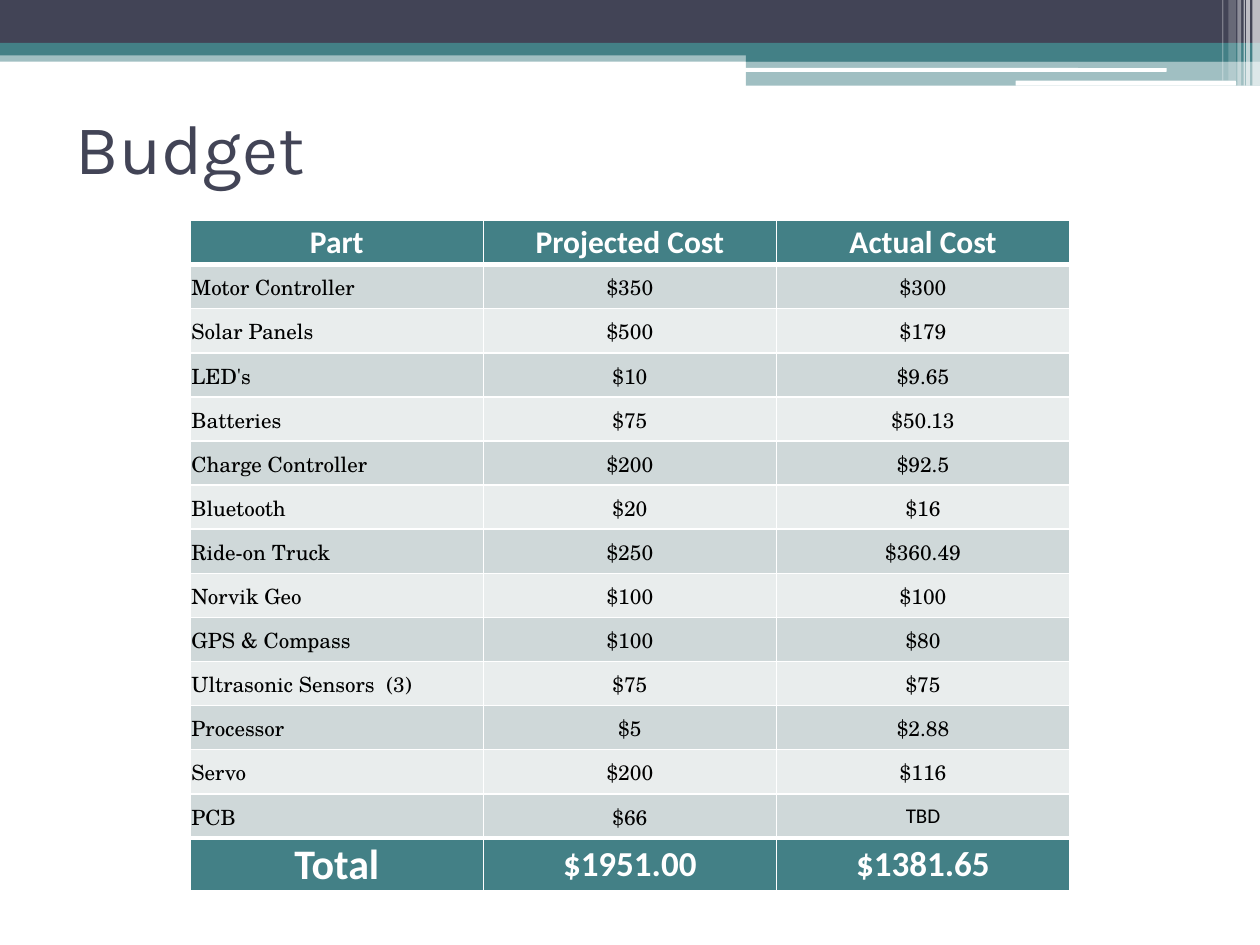
from lxml.etree import SubElement as Sub
from pptx import Presentation
from pptx.dml.color import RGBColor
from pptx.enum.shapes import MSO_SHAPE as Shape
from pptx.enum.text import MSO_ANCHOR as Anchor, MSO_AUTO_SIZE as Fit, PP_ALIGN as Align
from pptx.oxml.ns import qn
from pptx.util import Inches, Pt

COLS, ROWS = 1000, 750
NAVY, TEAL, WHITE = "424456", "438086", "FFFFFF"
SHADES = ["CFD8D9", "E9EDED"]
SERIF, SANS = "TeX Gyre Schola", "Calibri"

BANDS = [
    (0, 40, 1000, 9, TEAL, 50),
    (0, 0, 1000, 34, NAVY, 100),
    (0, 34, 1000, 10, TEAL, 100),
    (592, 39, 408, 10, TEAL, 100),
    (592, 48, 408, 20, TEAL, 50),
]
PILLS = [(591, 54, 335, 3), (806, 64, 175, 4)]
STRIPES = [
    (994, 6, 68, 65), (989, 3, 68, 65), (987, 1, 68, 60),
    (982, 3, 68, 40), (975, 6, 64, 20), (970, 1, 64, 30),
]
COSTS = [
    ("Part", "Projected Cost", "Actual Cost"),
    ("Motor Controller", "$350", "$300"),
    ("Solar Panels", "$500", "$179"),
    ("LED's", "$10", "$9.65"),
    ("Batteries", "$75", "$50.13"),
    ("Charge Controller", "$200", "$92.5"),
    ("Bluetooth", "$20", "$16"),
    ("Ride-on Truck", "$250", "$360.49"),
    ("Norvik Geo", "$100", "$100"),
    ("GPS & Compass", "$100", "$80"),
    ("Ultrasonic Sensors  (3)", "$75", "$75"),
    ("Processor", "$5", "$2.88"),
    ("Servo", "$200", "$116"),
    ("PCB", "$66", "TBD"),
    ("Total", "$1951.00", "$1381.65"),
]

deck = Presentation()
deck.slide_width, deck.slide_height = Inches(10), Inches(7.5)


def color(code):
    return RGBColor.from_string(code)


def place(left, top, wide, high):
    x, y = deck.slide_width / COLS, deck.slide_height / ROWS
    return [round(n) for n in (left * x, top * y, wide * x, high * y)]


def style(part, size, font, code, bold=False):
    for run in part.runs:
        run.font.size, run.font.name = Pt(size), font
        run.font.color.rgb, run.font.bold = color(code), bold


def block(slide, box, code, alpha=100, kind=Shape.RECTANGLE):
    shape = slide.shapes.add_shape(kind, *place(*box))
    shape.shadow.inherit = False
    shape.fill.solid()
    shape.fill.fore_color.rgb = color(code)
    shape.line.fill.background()
    if alpha < 100:
        tint = shape.fill._xPr.find(".//" + qn("a:srgbClr"))
        Sub(tint, qn("a:alpha"), val=str(alpha * 1000))


def banner(slide, left, top):
    for x, y, wide, high, code, alpha in BANDS:
        block(slide, (left + x, top + y, wide, high), code, alpha)
    for x, y, wide, high in PILLS:
        block(slide, (left + x, top + y, wide, high), WHITE, kind=Shape.ROUNDED_RECTANGLE)
    for x, wide, high, alpha in STRIPES:
        block(slide, (left + x, top, wide, high), WHITE, alpha)


def heading(slide, box, text):
    title = slide.shapes.title
    title.left, title.top, title.width, title.height = place(*box)
    frame = title.text_frame
    frame.text = text
    frame.auto_size = Fit.NONE
    frame.vertical_anchor = Anchor.MIDDLE
    frame.paragraphs[0].alignment = Align.LEFT
    style(frame.paragraphs[0], 40, "Karla", NAVY)


def border(cell, top, base):
    props = cell._tc.get_or_add_tcPr()
    for side, wide in zip("LRTB", (1, 1, top, base)):
        line = Sub(props, qn("a:ln" + side), w=str(Pt(wide)))
        Sub(Sub(line, qn("a:solidFill")), qn("a:srgbClr"), val=WHITE)


def fill_cell(cell, text, row, col):
    last = len(COSTS) - 1
    strong = row in (0, last)
    border(cell, 3 if row in (1, last) else 1, 3 if row in (0, last - 1) else 1)
    cell.fill.solid()
    cell.fill.fore_color.rgb = color(TEAL if strong else SHADES[(row - 1) % 2])
    cell.margin_left = cell.margin_right = cell.margin_top = Inches(0.01)
    cell.margin_bottom = 0
    cell.vertical_anchor = Anchor.MIDDLE
    cell.text_frame.text = text
    line = cell.text_frame.paragraphs[0]
    line.alignment = Align.CENTER if strong or col else Align.LEFT
    if strong:
        size = 18 if row == 0 else 20 if col else 24
        style(line, size, SANS, WHITE, True)
    else:
        style(line, 12, SANS if text == "TBD" else SERIF, "000000")


def budget(slide, box):
    left, top, wide, high = place(*box)
    count = len(COSTS)
    table = slide.shapes.add_table(count, 3, left, top, wide, high).table
    for col in table.columns:
        col.width = wide // 3
    step = Inches(0.35)
    for row in table.rows:
        row.height = step
    table.rows[count - 1].height = high - step * (count - 1)
    for r, texts in enumerate(COSTS):
        for c, text in enumerate(texts):
            fill_cell(table.cell(r, c), text, r, c)


def main():
    slide = deck.slides.add_slide(deck.slide_layouts[5])
    banner(slide, 0, 0)
    heading(slide, (50, 58, 900, 117), "Budget")
    budget(slide, (151, 175, 698, 529))
    deck.save("out.pptx")


if __name__ == "__main__":
    main()
